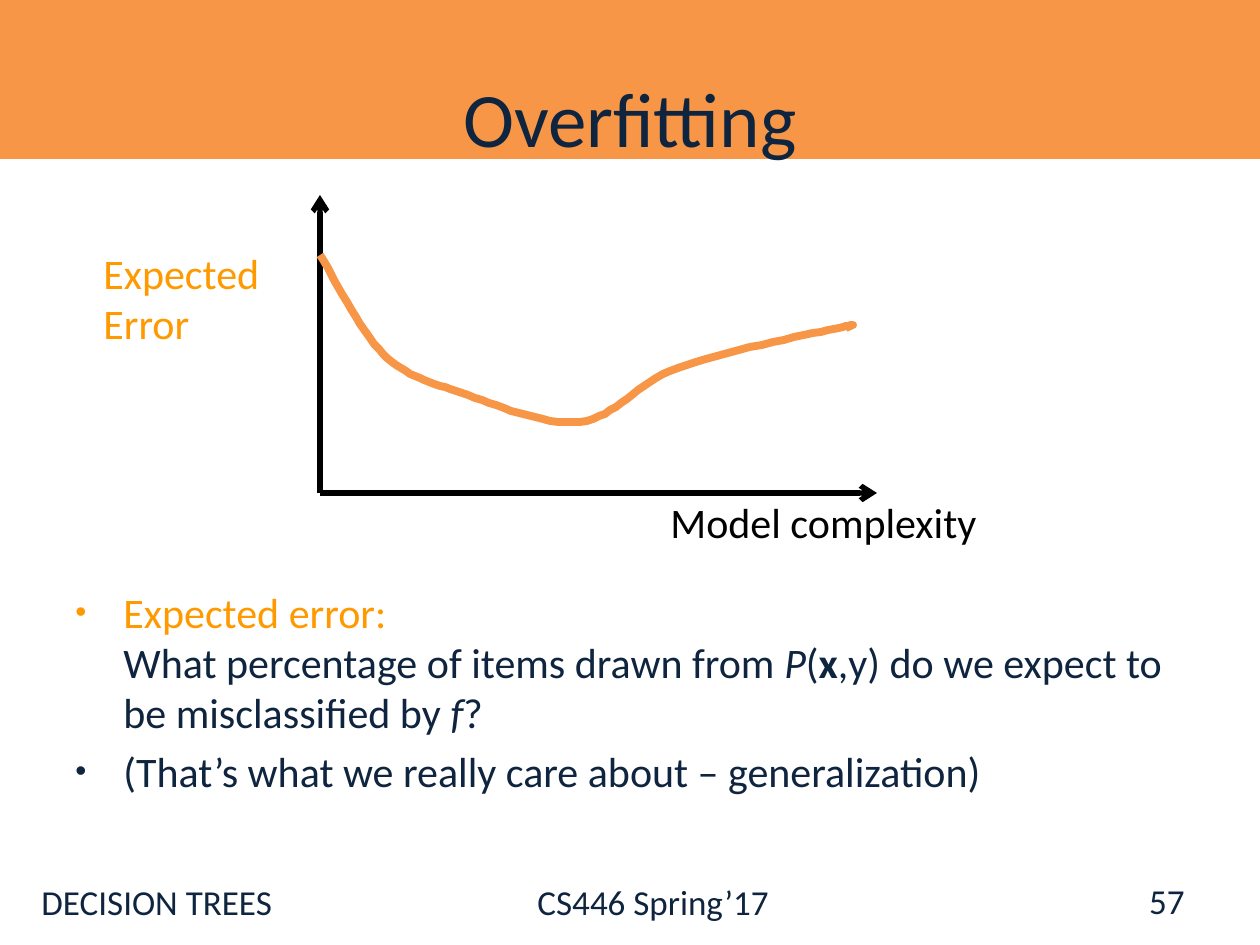
from lxml import etree
from pptx import Presentation
from pptx.dml.color import RGBColor
from pptx.enum.shapes import MSO_CONNECTOR, MSO_SHAPE
from pptx.enum.text import MSO_ANCHOR, PP_ALIGN
from pptx.oxml.ns import qn
from pptx.util import Pt

RECT, STRAIGHT = MSO_SHAPE.RECTANGLE, MSO_CONNECTOR.STRAIGHT
LEFT, CENTER, RIGHT = PP_ALIGN.LEFT, PP_ALIGN.CENTER, PP_ALIGN.RIGHT
TOP, MIDDLE = MSO_ANCHOR.TOP, MSO_ANCHOR.MIDDLE
PX = 914400 / 126
FONT = "Calibri"
COLORS = {"orange": "F79646", "navy": "0F243E", "black": "000000", "amber": "FF9900"}

# Content: bullets hold runs of (text, colour, style)
TITLE = "Overfitting"
BULLETS = [
    [("Expected error:", "amber", ""),
     ("\n", "amber", ""),
     ("What percentage of items drawn from ", "navy", ""),
     ("P", "navy", "italic"),
     ("(", "navy", ""),
     ("x", "navy", "bold"),
     (",y) do we expect to be misclassified by ", "navy", ""),
     ("f", "navy", "italic"),
     ("?", "navy", "")],
    [("(That’s what we really care about – generalization)", "navy", "")],
]
# Labels: text, box, size, colour, alignment, anchor
LABELS = [
    ("Model complexity", (658, 490, 486, 64), 24, "black", LEFT, TOP),
    ("Expected\vError", (91, 241, 244, 115), 24, "amber", LEFT, TOP),
    ("57", (903, 876, 294, 50), 20, "navy", RIGHT, MIDDLE),
]
FOOTER = ("DECISION TREES\tCS446 Spring’17", (29, 874, 1100, 71), 20, "navy", LEFT, TOP)
FOOTER_TAB = 496
ORIGIN = (320, 493)
AXIS_ENDS = [(320, 195), (877, 493)]
# Error curve: start point, then cubic segments (control, control, end)
CURVE_START = (320, 255)
CURVE = [
    ((330, 271), (360, 331), (383, 354)),
    ((407, 377), (430, 382), (462, 393)),
    ((494, 404), (543, 426), (580, 422)),
    ((616, 417), (636, 383), (678, 368)),
    ((721, 352), (806, 335), (834, 329)),
    ((862, 323), (852, 324), (845, 329)),
]
STEPS = 16


def emu(*values):
    return [round(v * PX) for v in values]


def rgb(name):
    return RGBColor.from_string(COLORS[name])


def style(font, size, color):
    font.name, font.size = FONT, Pt(size)
    font.color.rgb = rgb(color)


def add_label(text, box, size, color, align, anchor):
    tf = slide.shapes.add_textbox(*emu(*box)).text_frame
    tf.word_wrap, tf.vertical_anchor = True, anchor
    p = tf.paragraphs[0]
    p.text, p.alignment = text, align
    for r in p.runs:
        style(r.font, size, color)
    return p


def add_axis(end):
    line = slide.shapes.add_connector(STRAIGHT, *emu(*ORIGIN, *end))
    line.line.color.rgb, line.line.width = rgb("black"), Pt(3)
    etree.SubElement(line.line._get_or_add_ln(), qn("a:tailEnd"), type="arrow")
    etree.SubElement(line._element.spPr, qn("a:effectLst"))


def curve_points():
    start = CURVE_START
    for c1, c2, end in CURVE:
        for i in range(1, STEPS + 1):
            t = i / STEPS
            u = 1 - t
            yield tuple(u**3 * a + 3 * u * u * t * b + 3 * u * t * t * c + t**3 * d
                        for a, b, c, d in zip(start, c1, c2, end))
        start = end


def add_bullet(p):
    pPr = p._p.get_or_add_pPr()
    indent = emu(48)[0]
    pPr.set("marL", str(indent))
    pPr.set("indent", str(-indent))
    etree.SubElement(pPr, qn("a:buSzPct"), val="75000")
    etree.SubElement(pPr, qn("a:buFont"), typeface="Arial")
    etree.SubElement(pPr, qn("a:buChar"), char="•")


prs = Presentation()
prs.slide_width, prs.slide_height = emu(1260, 945)
slide = prs.slides.add_slide(prs.slide_layouts[5])

# Header band, placed behind the title
band = slide.shapes.add_shape(RECT, *emu(0, 0, 1260, 158))
band.shadow.inherit = False
band.fill.solid()
band.fill.fore_color.rgb = band.line.color.rgb = rgb("orange")
band.line.width = Pt(0.75)
slide.shapes._spTree.insert(2, band._element)

# Title
title = slide.shapes.title
title.left, title.top, title.width, title.height = emu(63, 38, 1134, 157)
tf = title.text_frame
tf.text, tf.vertical_anchor = TITLE, MIDDLE
tf.paragraphs[0].alignment = CENTER
style(tf.paragraphs[0].runs[0].font, 44, "navy")

# Graph axes
for end in AXIS_ENDS:
    add_axis(end)

# Error curve
builder = slide.shapes.build_freeform(*CURVE_START, scale=PX)
builder.add_line_segments(curve_points(), close=False)
curve = builder.convert_to_shape()
curve.shadow.inherit = False
curve.fill.background()
curve.line.color.rgb, curve.line.width = rgb("orange"), Pt(4.5)
etree.SubElement(curve.line._get_or_add_ln(), qn("a:round"))

# Labels and page number
for label in LABELS:
    add_label(*label)

# Footer
p = add_label(*FOOTER)
tabs = etree.SubElement(p._p.get_or_add_pPr(), qn("a:tabLst"))
etree.SubElement(tabs, qn("a:tab"), pos=str(emu(FOOTER_TAB)[0]), algn="l")

# Bullets
tf = slide.shapes.add_textbox(*emu(63, 580, 1153, 265)).text_frame
tf.word_wrap = True
for i, runs in enumerate(BULLETS):
    p = tf.add_paragraph() if i else tf.paragraphs[0]
    add_bullet(p)
    if i:
        p.space_before = Pt(4.8)
    for text, color, look in runs:
        if text == "\n":
            p.add_line_break()
            continue
        r = p.add_run()
        r.text = text
        style(r.font, 24, color)
        r.font.bold, r.font.italic = look == "bold", look == "italic"

prs.save("out.pptx")
